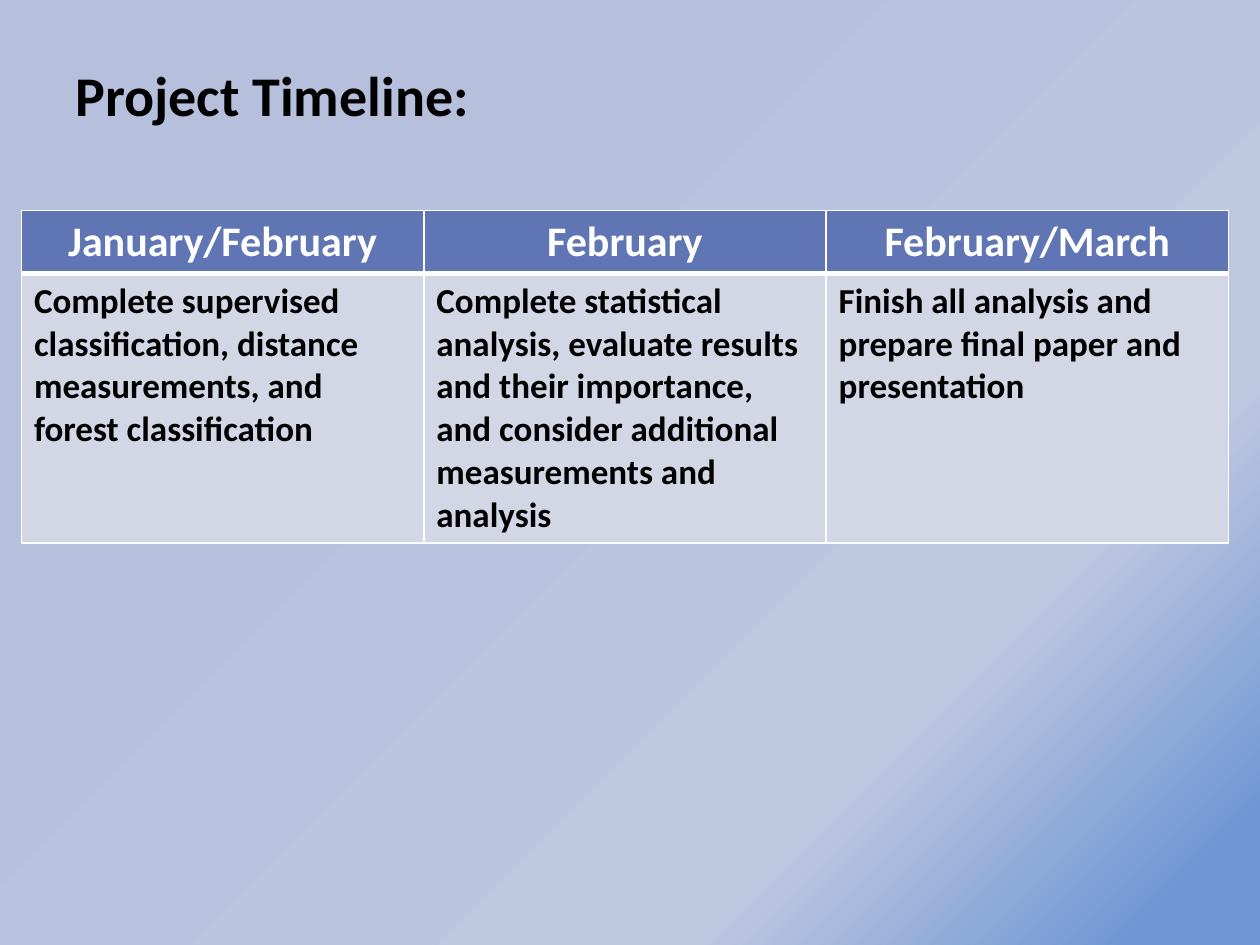
from copy import deepcopy
from dataclasses import dataclass

from lxml import etree
from pptx import Presentation
from pptx import util as u
from pptx.dml.color import RGBColor
from pptx.enum import text
from pptx.oxml.ns import qn


@dataclass(frozen=True)
class Theme:
    font: str = "Calibri"
    black: str = "000000"
    white: str = "FFFFFF"
    header_fill: str = "6076B4"
    body_fill: str = "D2D6E5"
    background: tuple = ((0.29, "B6BFDC"), (0.74, "BFC8E1"), (0.94, "7097D3"))
    title_size: int = 32
    header_size: int = 24
    body_size: int = 20


@dataclass(frozen=True)
class Phase:
    period: str
    tasks: str


@dataclass(frozen=True)
class CellStyle:
    size: int
    color: str
    fill: str
    align: text.PP_ALIGN
    bottom_border: int


THEME = Theme()
HEADER = CellStyle(THEME.header_size, THEME.white, THEME.header_fill, text.PP_ALIGN.CENTER, 3)
BODY = CellStyle(THEME.body_size, THEME.black, THEME.body_fill, text.PP_ALIGN.LEFT, 1)
PHASES = (
    Phase("January/February",
          "Complete supervised classification, distance measurements, and forest classification"),
    Phase("February",
          "Complete statistical analysis, evaluate results and their importance, "
          "and consider additional measurements and analysis"),
    Phase("February/March", "Finish all analysis and prepare final paper and presentation"),
)


def write_text(frame, words: str, size: int, color: str, align: text.PP_ALIGN) -> None:
    paragraph = frame.paragraphs[0]
    paragraph.alignment = align
    run = paragraph.add_run()
    run.text = words
    for name, value in {"name": THEME.font, "size": u.Pt(size), "bold": True}.items():
        setattr(run.font, name, value)
    run.font.color.rgb = RGBColor.from_string(color)


def paint_background(slide) -> None:
    fill = slide.background.fill
    fill.gradient()
    fill.gradient_angle = 315
    stop_list = slide.element.find(".//" + qn("a:gsLst"))
    stop_list.append(deepcopy(stop_list[-1]))
    for stop, (position, color) in zip(fill.gradient_stops, THEME.background):
        stop.position = position
        stop.color.rgb = RGBColor.from_string(color)


def add_border(properties, side: str, width: int) -> None:
    line = etree.SubElement(properties, qn(f"a:{side}"), w=str(u.Pt(width)))
    solid = etree.SubElement(line, qn("a:solidFill"))
    etree.SubElement(solid, qn("a:srgbClr"), val=THEME.white)


def fill_cell(cell, words: str, style: CellStyle) -> None:
    write_text(cell.text_frame, words, style.size, style.color, style.align)
    properties = cell._tc.get_or_add_tcPr()
    for side, width in {"lnL": 1, "lnR": 1, "lnT": 1, "lnB": style.bottom_border}.items():
        add_border(properties, side, width)
    cell.fill.solid()
    cell.fill.fore_color.rgb = RGBColor.from_string(style.fill)


def add_title(slide, words: str) -> None:
    box = slide.shapes.add_textbox(u.Inches(0.5), u.Inches(0.43), u.Inches(8.17), u.Inches(0.64))
    box.text_frame.word_wrap = True
    write_text(box.text_frame, words, THEME.title_size, THEME.black, text.PP_ALIGN.LEFT)


def add_timeline(slide, phases: tuple[Phase, ...]) -> None:
    table = slide.shapes.add_table(
        2, len(phases), u.Inches(0.17), u.Inches(1.67), u.Inches(9.58), u.Inches(2.64)).table
    for row, height in zip(table.rows, (0.5, 2.14)):
        row.height = u.Inches(height)
    for column, phase in enumerate(phases):
        fill_cell(table.cell(0, column), phase.period, HEADER)
        fill_cell(table.cell(1, column), phase.tasks, BODY)
        if column:
            continue
    for cell in (table.cell(1, column) for column in range(len(phases))):
        top = cell._tc.tcPr.find(qn("a:lnT"))
        top.set("w", str(u.Pt(HEADER.bottom_border)))


def main() -> None:
    presentation = Presentation()
    presentation.slide_width, presentation.slide_height = u.Inches(10), u.Inches(7.5)
    slide = presentation.slides.add_slide(presentation.slide_layouts[6])
    paint_background(slide)
    add_title(slide, "Project Timeline:")
    add_timeline(slide, PHASES)
    presentation.save("out.pptx")


if __name__ == "__main__":
    main()
